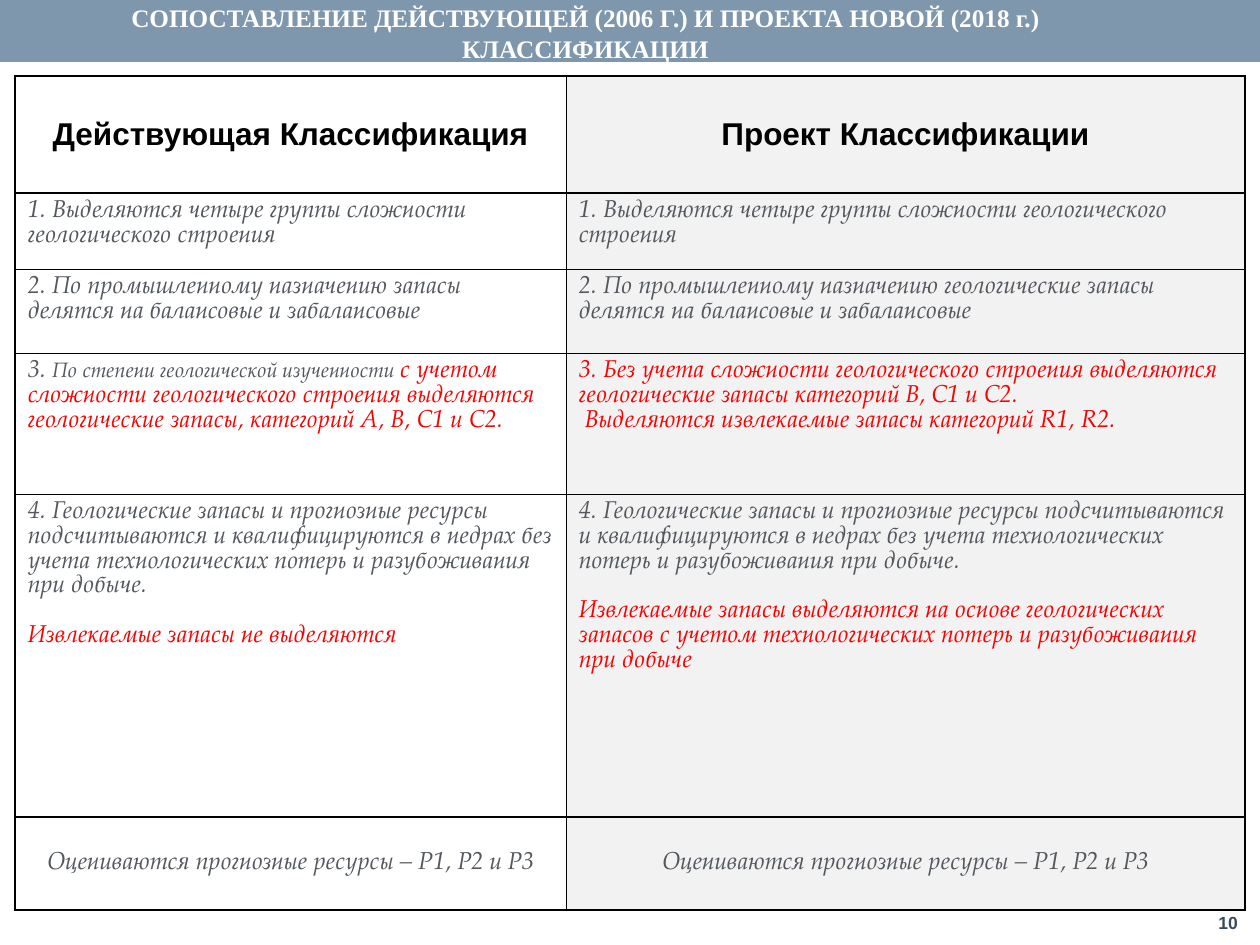
from lxml import etree
from pptx import Presentation
from pptx.dml.color import RGBColor
from pptx.enum.shapes import MSO_SHAPE
from pptx.enum.text import MSO_ANCHOR, MSO_AUTO_SIZE, PP_ALIGN
from pptx.oxml.ns import qn
from pptx.util import Emu, Pt

RECTANGLE = MSO_SHAPE.RECTANGLE
TOP, MIDDLE = MSO_ANCHOR.TOP, MSO_ANCHOR.MIDDLE
LEFT, CENTER = PP_ALIGN.LEFT, PP_ALIGN.CENTER
NO_AUTOFIT = MSO_AUTO_SIZE.NONE

EMU_PER_PX = 914400 / 126
COLORS = {
    "band": "7E97AD",
    "white": "FFFFFF",
    "black": "000000",
    "project": "F2F2F2",
    "body": "53585E",
    "change": "FF0000",
    "number": "3A4C5B",
}
TITLE = "СОПОСТАВЛЕНИЕ ДЕЙСТВУЮЩЕЙ (2006 Г.) И ПРОЕКТА НОВОЙ (2018 г.) КЛАССИФИКАЦИИ"
HEADERS = ["Действующая Классификация", "Проект Классификации"]
GROUPS = "1. Выделяются четыре группы сложности геологического строения"
RESERVES = (
    "4. Геологические запасы и прогнозные ресурсы подсчитываются и квалифицируются "
    "в недрах без учета технологических потерь и разубоживания при добыче."
)
RESOURCES = "Оцениваются прогнозные ресурсы – P1, Р2 и Р3"
BODY_ROWS = [
    [[[(GROUPS, "body", 14)]]] * 2,
    [
        [[("2. По промышленному назначению запасы делятся на балансовые и забалансовые", "body", 14)]],
        [[("2. По промышленному назначению геологические запасы делятся на балансовые "
           "и забалансовые", "body", 14)]],
    ],
    [
        [[
            ("3. ", "body", 14),
            ("По степени геологической изученности ", "body", 12),
            ("с учетом сложности геологического строения выделяются геологические запасы, "
             "категорий А, В, С1 и С2.", "change", 14),
        ]],
        [
            [("3. Без учета сложности геологического строения выделяются геологические "
              "запасы категорий В, С1 и С2.", "change", 14)],
            [(" Выделяются извлекаемые запасы категорий R1, R2.", "change", 14)],
        ],
    ],
    [
        [
            [(RESERVES, "body", 14)],
            [("Извлекаемые запасы не выделяются", "change", 14)],
        ],
        [
            [(RESERVES, "body", 14)],
            [("Извлекаемые запасы выделяются на основе геологических запасов с учетом "
              "технологических потерь и разубоживания при добыче", "change", 14)],
        ],
    ],
    [[[(RESOURCES, "body", 14)]]] * 2,
]
COLUMN_WIDTHS = [551, 679]
ROW_HEIGHTS = [117, 76, 84, 141, 323, 93]
SEPARATED_ROW = 4
THICK_EDGES = {0, 1, 5, 6}


def px(value):
    return Emu(round(value * EMU_PER_PX))


def box(left, top, width, height):
    return [px(value) for value in (left, top, width, height)]


def rgb(name):
    return RGBColor.from_string(COLORS[name])


def style_font(font, name, size, color, bold=False, italic=False):
    font.name = name
    font.size = Pt(size)
    font.color.rgb = rgb(color)
    font.bold = bold
    font.italic = italic


def add_band(slide):
    band = slide.shapes.add_shape(RECTANGLE, *box(0, 0, 1260, 62))
    band.shadow.inherit = False
    band.fill.solid()
    band.fill.fore_color.rgb = rgb("band")
    band.line.fill.background()
    slide.shapes._spTree.insert(2, band._element)


def fill_title(slide):
    title = slide.shapes.title
    title.left, title.top, title.width, title.height = box(25, 0, 1121, 66)
    frame = title.text_frame
    frame.text = TITLE
    frame.word_wrap = True
    frame.auto_size = NO_AUTOFIT
    frame.vertical_anchor = MIDDLE
    frame.margin_top = frame.margin_bottom = 0
    paragraph = frame.paragraphs[0]
    paragraph.alignment = CENTER
    style_font(paragraph.font, "Times New Roman", 14.4, "white", bold=True)


def add_page_number(slide):
    frame = slide.shapes.add_textbox(*box(1206, 900, 53, 45)).text_frame
    frame.word_wrap = True
    frame.vertical_anchor = MIDDLE
    paragraph = frame.paragraphs[0]
    paragraph.text = "10"
    style_font(paragraph.font, "Arial", 10, "number", bold=True)


def set_borders(cell, widths):
    properties = cell._tc.get_or_add_tcPr()
    for side, width in zip("LRTB", widths):
        line = etree.SubElement(properties, qn(f"a:ln{side}"), w=str(Pt(width)))
        fill = etree.SubElement(line, qn("a:solidFill"))
        etree.SubElement(fill, qn("a:srgbClr"), val=COLORS["black"])


def format_cell(cell, row, column):
    edges = [column == 0, column == 1, row in THICK_EDGES, row + 1 in THICK_EDGES]
    set_borders(cell, [1 if thick else 0.5 for thick in edges])
    cell.fill.solid()
    cell.fill.fore_color.rgb = rgb("project" if column else "white")
    cell.vertical_anchor = MIDDLE if row in (0, 5) else TOP


def write_header(cell, text):
    paragraph = cell.text_frame.paragraphs[0]
    paragraph.text = text
    paragraph.alignment = CENTER
    style_font(paragraph.font, "Arial", 18, "black", bold=True)


def write_body(cell, paragraphs, alignment, gap):
    frame = cell.text_frame
    for index, runs in enumerate(paragraphs):
        paragraph = frame.add_paragraph() if index else frame.paragraphs[0]
        paragraph.alignment = alignment
        paragraph.line_spacing = Pt(14.2)
        if index:
            paragraph.space_before = Pt(gap)
        style_font(paragraph.font, "TeX Gyre Pagella", 14, runs[0][1], italic=True)
        for text, color, size in runs:
            run = paragraph.add_run()
            run.text = text
            if len(runs) > 1:
                style_font(run.font, "TeX Gyre Pagella", size, color, italic=True)


def add_comparison_table(slide):
    frame = slide.shapes.add_table(
        len(ROW_HEIGHTS), len(COLUMN_WIDTHS),
        *box(15, 76, sum(COLUMN_WIDTHS), sum(ROW_HEIGHTS)),
    )
    table = frame.table
    table.first_row = table.horz_banding = False
    for column, width in zip(table.columns, COLUMN_WIDTHS):
        column.width = px(width)
    for row, height in zip(table.rows, ROW_HEIGHTS):
        row.height = px(height)
    for row, contents in enumerate([HEADERS] + BODY_ROWS):
        for column, content in enumerate(contents):
            cell = table.cell(row, column)
            format_cell(cell, row, column)
            if row == 0:
                write_header(cell, content)
            else:
                alignment = CENTER if row == 5 else LEFT
                write_body(cell, content, alignment, 14 if row == SEPARATED_ROW else 0)


def main():
    presentation = Presentation()
    presentation.slide_width, presentation.slide_height = px(1260), px(945)
    slide = presentation.slides.add_slide(presentation.slide_layouts[5])
    add_band(slide)
    fill_title(slide)
    add_comparison_table(slide)
    add_page_number(slide)
    presentation.save("out.pptx")


if __name__ == "__main__":
    main()
